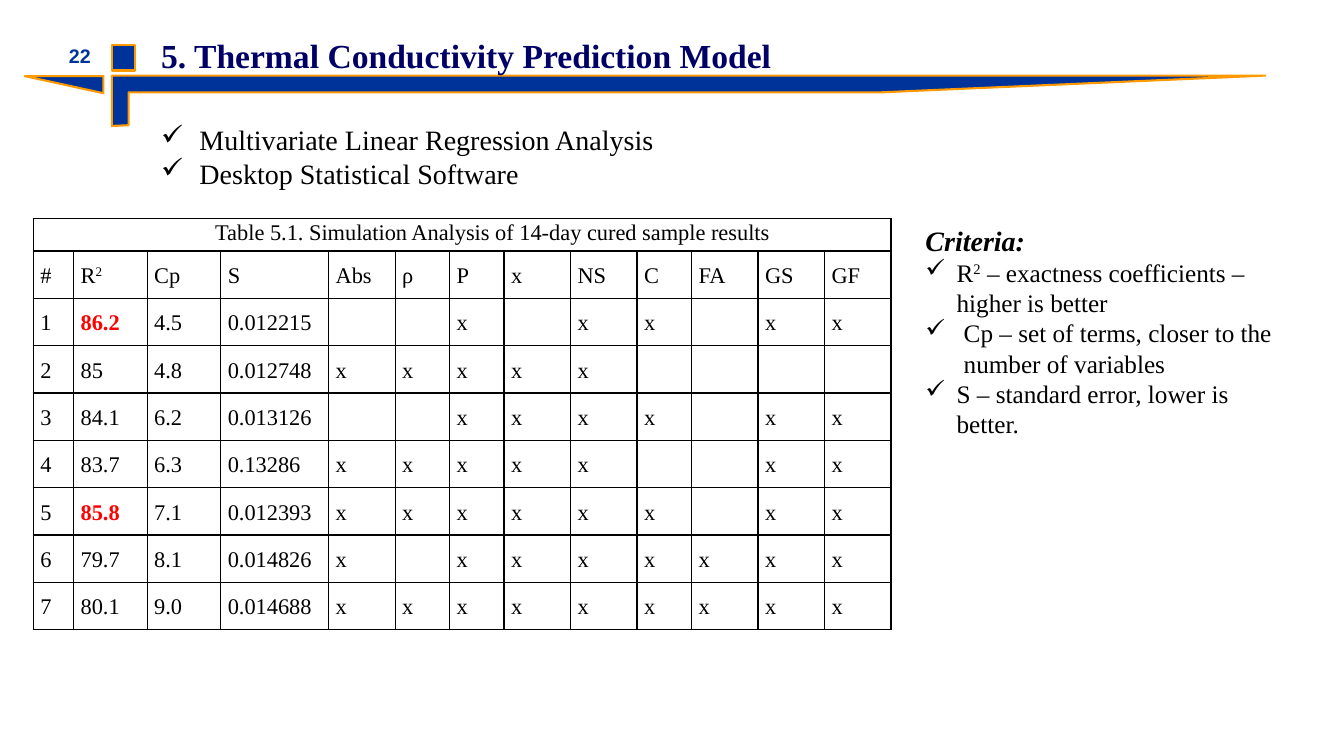
from dataclasses import dataclass

from lxml.etree import SubElement
from pptx import Presentation
from pptx.dml.color import RGBColor
from pptx.enum.shapes import MSO_SHAPE
from pptx.enum.text import MSO_ANCHOR, MSO_AUTO_SIZE, PP_ALIGN
from pptx.oxml import parse_xml
from pptx.oxml.ns import nsdecls, qn
from pptx.util import Inches, Pt


@dataclass(frozen=True)
class Theme:
    serif: str = "Times New Roman"
    sans: str = "Arial"
    black: str = "000000"
    red: str = "FF0000"
    navy: str = "000066"
    blue: str = "003399"
    orange: str = "FF9900"
    title: int = 24
    lead: int = 20
    body: int = 18
    table: int = 16
    number: int = 14


THEME = Theme()

COLUMN_WIDTHS = [0.4, 0.73, 0.73, 1.07, 0.66, 0.54, 0.54, 0.66, 0.66, 0.54,
                 0.66, 0.66, 0.66]
CAPTION = "Table 5.1. Simulation Analysis of 14-day cured sample results"
HEADERS = ["#", "R²", "Cp", "S", "Abs", "ρ", "P", "x", "NS", "C", "FA", "GS", "GF"]
# R², Cp, S, then one mark for each variable from Abs to GF
MODELS = [
    ("86.2", "4.5", "0.012215", "--x-xx-xx"),
    ("85", "4.8", "0.012748", "xxxxx----"),
    ("84.1", "6.2", "0.013126", "--xxxx-xx"),
    ("83.7", "6.3", "0.13286", "xxxxx--xx"),
    ("85.8", "7.1", "0.012393", "xxxxxx-xx"),
    ("79.7", "8.1", "0.014826", "x-xxxxxxx"),
    ("80.1", "9.0", "0.014688", "xxxxxxxxx"),
]
BEST_R2 = {"86.2", "85.8"}


def add_run(p, text, size, color=THEME.black, font=THEME.serif, bold=False,
            italic=False, superscript=False):
    r = p.add_run()
    r.text = text
    r.font.size = Pt(size)
    r.font.name = font
    r.font.bold = bold
    r.font.italic = italic
    r.font.color.rgb = RGBColor.from_string(color)
    if superscript:
        r.font._element.set("baseline", "30000")


def add_squared(p, base, size):
    add_run(p, base, size)
    add_run(p, "2", size, superscript=True)


def add_text_box(slide, left, top, width, height, anchor=MSO_ANCHOR.TOP):
    tf = slide.shapes.add_textbox(
        Inches(left), Inches(top), Inches(width), Inches(height)).text_frame
    tf.word_wrap = True
    tf.auto_size = MSO_AUTO_SIZE.NONE
    tf.vertical_anchor = anchor
    return tf


def set_check_bullet(p, indent):
    pPr = p._p.get_or_add_pPr()
    pPr.set("marL", str(Inches(indent)))
    pPr.set("indent", str(-Inches(indent)))
    SubElement(pPr, qn("a:buChar")).set("char", "✓")


def add_ornament(slide, kind, left, top, width, height):
    sp = slide.shapes.add_shape(
        kind, Inches(left), Inches(top), Inches(width), Inches(height))
    sp.shadow.inherit = False
    sp.fill.solid()
    sp.fill.fore_color.rgb = RGBColor.from_string(THEME.blue)
    sp.line.color.rgb = RGBColor.from_string(THEME.orange)
    sp.line.width = Pt(1.5)
    return sp


def add_header(slide):
    add_ornament(slide, MSO_SHAPE.HALF_FRAME, 1.11, 0.75, 11.44, 0.5)
    wedge = add_ornament(slide, MSO_SHAPE.RIGHT_TRIANGLE, 0.55, 0.45, 0.17, 0.78)
    wedge.rotation = 270
    wedge._element.spPr.find(qn("a:xfrm")).set("flipH", "1")
    add_ornament(slide, MSO_SHAPE.RECTANGLE, 1.11, 0.45, 0.23, 0.25)

    p = add_text_box(slide, 0.33, 0.35, 0.67, 0.4, MSO_ANCHOR.MIDDLE).paragraphs[0]
    p.alignment = PP_ALIGN.RIGHT
    add_run(p, "22", THEME.number, THEME.blue, THEME.sans, bold=True)

    p = add_text_box(slide, 1.5, 0.3, 10.08, 0.5).paragraphs[0]
    add_run(p, "5. Thermal Conductivity Prediction Model", THEME.title,
            THEME.navy, bold=True)


def add_methods(slide):
    tf = add_text_box(slide, 1.5, 1.17, 5.75, 0.77)
    methods = ["Multivariate Linear Regression Analysis",
               "Desktop Statistical Software"]
    for i, method in enumerate(methods):
        p = tf.add_paragraph() if i else tf.paragraphs[0]
        set_check_bullet(p, 0.38)
        add_run(p, method, THEME.lead)


def style_cell(cell):
    """Clear the fill, set the margins and draw a thin black border."""
    cell.fill.background()
    cell.margin_left = cell.margin_right = Inches(0.07)
    cell.margin_top = cell.margin_bottom = 0
    tcPr = cell._tc.get_or_add_tcPr()
    for i, side in enumerate(("lnL", "lnR", "lnT", "lnB")):
        tcPr.insert(i, parse_xml(
            f'<a:{side} {nsdecls("a")} w="{Pt(1)}"><a:solidFill>'
            f'<a:srgbClr val="{THEME.black}"/></a:solidFill></a:{side}>'))


def fill_cell(cell, text):
    p = cell.text_frame.paragraphs[0]
    p.alignment = PP_ALIGN.JUSTIFY
    p.line_spacing = 1.5
    if text == "R²":
        add_squared(p, "R", THEME.table)
    elif text in BEST_R2:
        add_run(p, text, THEME.table, THEME.red, bold=True)
    elif text != "-":
        add_run(p, text, THEME.table)


def add_results_table(slide):
    rows = [HEADERS] + [[str(n), r2, cp, s, *marks]
                        for n, (r2, cp, s, marks) in enumerate(MODELS, 1)]
    table = slide.shapes.add_table(
        len(rows) + 1, len(HEADERS), Inches(0.33), Inches(2.17),
        Inches(sum(COLUMN_WIDTHS)), Inches(4.11)).table
    table.first_row = table.horz_banding = False
    for column, width in zip(table.columns, COLUMN_WIDTHS):
        column.width = Inches(width)
    for i, row in enumerate(table.rows):
        row.height = Inches(0.47 if i else 0.32)
    for cell in table.iter_cells():
        style_cell(cell)

    caption = table.cell(0, 0)
    caption.merge(table.cell(0, len(HEADERS) - 1))
    p = caption.text_frame.paragraphs[0]
    p.alignment = PP_ALIGN.CENTER
    p.line_spacing = 1.07
    p.space_before = Pt(10)
    p._p.get_or_add_pPr().set("marL", str(Inches(0.6)))
    add_run(p, CAPTION, THEME.table)

    for i, values in enumerate(rows, 1):
        for j, value in enumerate(values):
            fill_cell(table.cell(i, j), value)


def add_criteria(slide):
    tf = add_text_box(slide, 9.08, 2.17, 3.75, 2.26)
    add_run(tf.paragraphs[0], "Criteria:", THEME.lead, bold=True, italic=True)

    p = tf.add_paragraph()
    set_check_bullet(p, 0.31)
    add_squared(p, "R", THEME.body)
    add_run(p, " – exactness coefficients – higher is better", THEME.body)

    for indent, text in [
            (0.38, "Cp – set of terms, closer to the number of variables"),
            (0.31, "S – standard error, lower is better.")]:
        p = tf.add_paragraph()
        set_check_bullet(p, indent)
        add_run(p, text, THEME.body)


def main():
    prs = Presentation()
    prs.slide_width, prs.slide_height = Inches(13.33), Inches(7.5)
    slide = prs.slides.add_slide(prs.slide_layouts[6])
    add_header(slide)
    add_methods(slide)
    add_results_table(slide)
    add_criteria(slide)
    prs.save("out.pptx")


if __name__ == "__main__":
    main()
